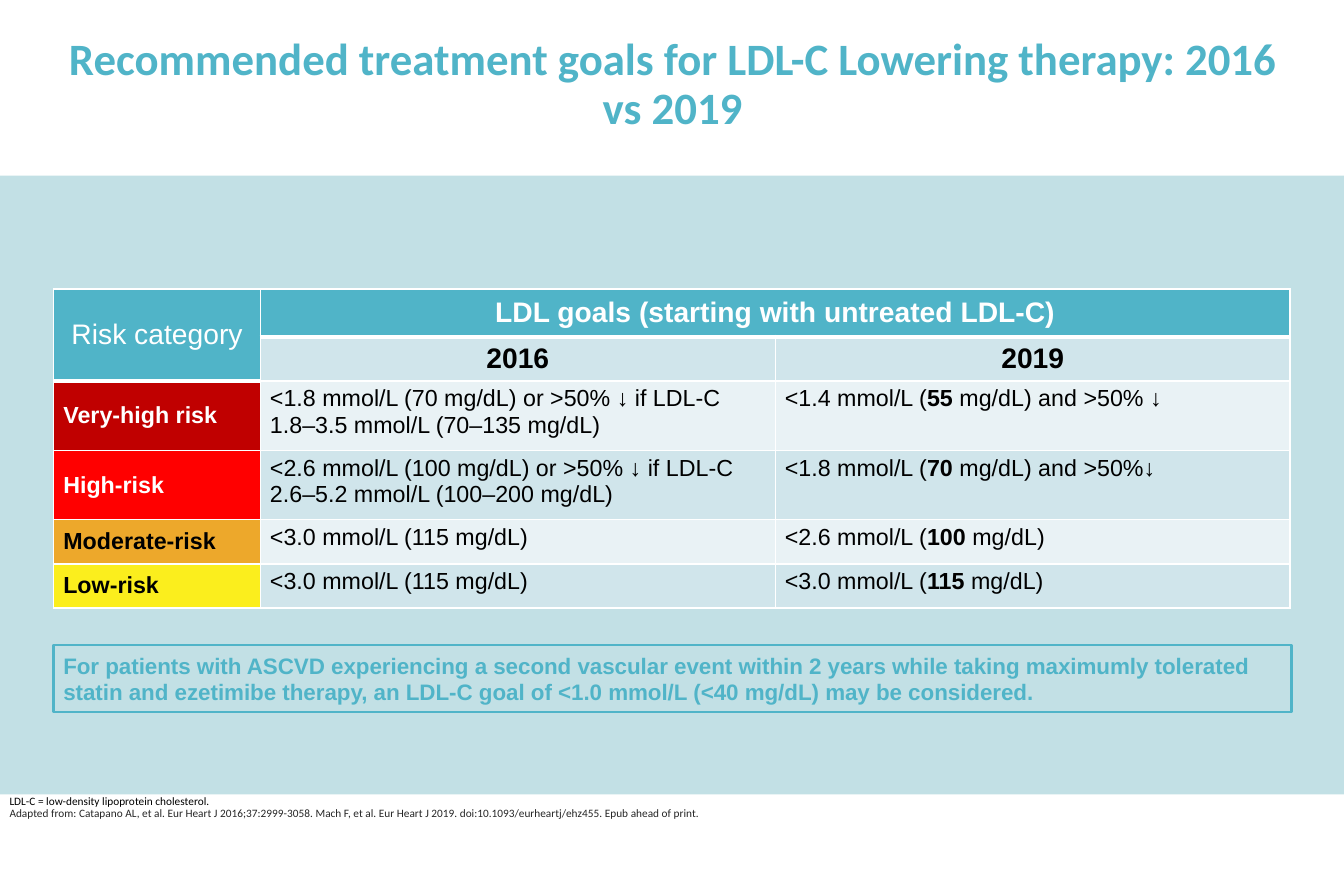
"""Build the slide comparing the 2016 and 2019 LDL-C treatment goals."""
import pptx
import pptx.dml.color
import pptx.enum.shapes
import pptx.enum.text
import pptx.oxml.ns
import pptx.util
from lxml import etree

Inches = pptx.util.Inches
Pt = pptx.util.Pt
ALIGN = pptx.enum.text.PP_ALIGN
ANCHOR = pptx.enum.text.MSO_ANCHOR
RECTANGLE = pptx.enum.shapes.MSO_SHAPE.RECTANGLE

COLORS = {
    "teal": "50B4C8", "band": "C2E0E5", "light": "E9F2F5", "mid": "D0E5EB",
    "white": "FFFFFF", "black": "000000", "gray": "262626",
    "very high": "C00000", "high": "FF0000", "moderate": "EDA82B", "low": "FBEE1D",
}
LEFT, WIDTH = 0.45, 10.36
COLUMN_WIDTHS = [1.73, 4.31, 4.31]
ROW_HEIGHTS = [0.4, 0.37, 0.58, 0.58, 0.37, 0.37]
RISK_ROWS = [
    ("Very-high risk", "very high", "white",
     "<1.8 mmol/L (70 mg/dL) or >50% ↓ if LDL-C\v1.8–3.5 mmol/L (70–135 mg/dL)",
     ["<1.4 mmol/L (", "55", " mg/dL) and >50% ↓"]),
    ("High-risk", "high", "white",
     "<2.6 mmol/L (100 mg/dL) or >50% ↓ if LDL-C 2.6–5.2 mmol/L (100–200 mg/dL)",
     ["<1.8 mmol/L (", "70", " mg/dL) and >50%↓"]),
    ("Moderate-risk", "moderate", "black", "<3.0 mmol/L (115 mg/dL)",
     ["<2.6 mmol/L (", "100 ", "mg/dL)"]),
    ("Low-risk", "low", "black", "<3.0 mmol/L (115 mg/dL)",
     ["<3.0 mmol/L (", "115", " mg/dL)"]),
]


def color(name):
    """Return the named colour."""
    return pptx.dml.color.RGBColor.from_string(COLORS[name])


def format_run(span, size, shade, bold=False, font="Arial"):
    """Set the font of one run."""
    span.font.name = font
    span.font.size = Pt(size)
    span.font.bold = bold
    span.font.color.rgb = color(shade)


def set_insets(target):
    """Give a cell or text frame the slide's common margins."""
    target.margin_left = target.margin_right = Inches(0.08)
    target.margin_top = target.margin_bottom = Inches(0.04)


def set_frame(frame, anchor):
    """Set wrapping, margins and anchor of a text frame."""
    frame.word_wrap = True
    frame.auto_size = pptx.enum.text.MSO_AUTO_SIZE.NONE
    frame.vertical_anchor = anchor
    set_insets(frame)


def place(shape, left, top, width, height):
    """Move and size a shape in inches."""
    shape.left, shape.top = Inches(left), Inches(top)
    shape.width, shape.height = Inches(width), Inches(height)


def add_rectangle(page, left, top, width, height, fill=None, line=None):
    """Add a rectangle with an optional fill and outline."""
    box = page.shapes.add_shape(
        RECTANGLE, Inches(left), Inches(top), Inches(width), Inches(height))
    box.shadow.inherit = False
    if fill:
        box.fill.solid()
        box.fill.fore_color.rgb = color(fill)
    else:
        box.fill.background()
    if line:
        box.line.color.rgb = color(line)
        box.line.width = Pt(1.5)
    else:
        box.line.fill.background()
    return box


def set_borders(cell, bottom):
    """Draw white lines around a cell."""
    properties = cell._tc.get_or_add_tcPr()
    for side, width in (("L", 1), ("R", 1), ("T", 1), ("B", bottom)):
        line = etree.SubElement(
            properties, pptx.oxml.ns.qn(f"a:ln{side}"), w=str(Pt(width)))
        solid = etree.SubElement(line, pptx.oxml.ns.qn("a:solidFill"))
        etree.SubElement(solid, pptx.oxml.ns.qn("a:srgbClr"), val=COLORS["white"])


def style_cell(cell, fill, anchor=ANCHOR.MIDDLE, bottom=1):
    """Set borders, fill, margins and anchor of a cell."""
    set_borders(cell, bottom)
    cell.fill.solid()
    cell.fill.fore_color.rgb = color(fill)
    set_insets(cell)
    cell.vertical_anchor = anchor


def write_cell(cell, text, size, shade, bold=False, align=ALIGN.LEFT):
    """Write text in one style into a cell."""
    cell.text_frame.text = text
    para = cell.text_frame.paragraphs[0]
    para.alignment = align
    for span in para.runs:
        format_run(span, size, shade, bold)


def write_goal(cell, parts):
    """Write a goal whose middle part is bold."""
    para = cell.text_frame.paragraphs[0]
    for index, part in enumerate(parts):
        span = para.add_run()
        span.text = part
        format_run(span, 14, "black", index == 1)


def add_goals_table(page):
    """Add the table of goals by risk category."""
    table = page.shapes.add_table(
        len(ROW_HEIGHTS), len(COLUMN_WIDTHS), Inches(LEFT), Inches(2.42),
        Inches(sum(COLUMN_WIDTHS)), Inches(sum(ROW_HEIGHTS))).table
    for column, width in zip(table.columns, COLUMN_WIDTHS):
        column.width = Inches(width)
    for row, height in zip(table.rows, ROW_HEIGHTS):
        row.height = Inches(height)

    table.cell(0, 0).merge(table.cell(1, 0))
    table.cell(0, 1).merge(table.cell(0, 2))
    for column in range(3):
        style_cell(table.cell(0, column), "teal", bottom=3)
        style_cell(table.cell(1, column), "mid" if column else "teal")
    write_cell(table.cell(0, 0), "Risk category", 17, "white", align=ALIGN.CENTER)
    write_cell(table.cell(0, 1), "LDL goals (starting with untreated LDL-C)",
               17, "white", True, ALIGN.CENTER)
    for column, year in enumerate(("2016", "2019"), 1):
        write_cell(table.cell(1, column), year, 17, "black", True, ALIGN.CENTER)

    for row, (risk, fill, shade, old_goal, new_goal) in enumerate(RISK_ROWS, 2):
        stripe = "mid" if row % 2 else "light"
        style_cell(table.cell(row, 0), fill)
        style_cell(table.cell(row, 1), stripe, ANCHOR.TOP)
        style_cell(table.cell(row, 2), stripe, ANCHOR.TOP)
        write_cell(table.cell(row, 0), risk, 14, shade, True)
        write_cell(table.cell(row, 1), old_goal, 14, "black")
        write_goal(table.cell(row, 2), new_goal)


def set_title(page):
    """Place and format the title."""
    title = page.shapes.title
    place(title, LEFT, 0.24, WIDTH, 0.92)
    title.text_frame.text = (
        "Recommended treatment goals for LDL-C Lowering therapy: 2016 vs 2019")
    set_frame(title.text_frame, ANCHOR.BOTTOM)
    para = title.text_frame.paragraphs[0]
    para.alignment = ALIGN.CENTER
    para.line_spacing = 0.9
    format_run(para.runs[0], 27, "teal", True, "Calibri")


def add_note(page):
    """Add the outlined note on recurrent events."""
    box = add_rectangle(page, LEFT, 5.4, WIDTH, 0.56, line="teal")
    box.text_frame.text = (
        "For patients with ASCVD experiencing a second vascular event within 2 years "
        "while taking maximumly tolerated statin and ezetimibe therapy, an LDL-C goal "
        "of <1.0 mmol/L (<40 mg/dL) may be considered.")
    set_frame(box.text_frame, ANCHOR.MIDDLE)
    para = box.text_frame.paragraphs[0]
    para.alignment = ALIGN.LEFT
    format_run(para.runs[0], 13.5, "teal", True)


def add_footnote(page):
    """Add the abbreviation and the references."""
    box = page.shapes.add_textbox(Inches(0), Inches(6.56), Inches(7.14), Inches(0.34))
    box.text_frame.text = (
        "LDL-C = low-density lipoprotein cholesterol.\v"
        "Adapted from: Catapano AL, et al. Eur Heart J 2016;37:2999-3058. "
        "Mach F, et al. Eur Heart J 2019. doi:10.1093/eurheartj/ehz455. "
        "Epub ahead of print.")
    set_frame(box.text_frame, ANCHOR.BOTTOM)
    para = box.text_frame.paragraphs[0]
    para.line_spacing = 0.85
    for span, shade in zip(para.runs, ("black", "gray")):
        format_run(span, 6.8, shade, font="Calibri")


def main():
    """Build and save the deck."""
    deck = pptx.Presentation()
    deck.slide_width, deck.slide_height = Inches(11.25), Inches(7.5)
    page = deck.slides.add_slide(deck.slide_layouts[5])
    add_rectangle(page, 0, 1.47, 11.25, 5.18, fill="band")
    set_title(page)
    add_goals_table(page)
    add_note(page)
    add_footnote(page)
    deck.save("out.pptx")


if __name__ == "__main__":
    main()
